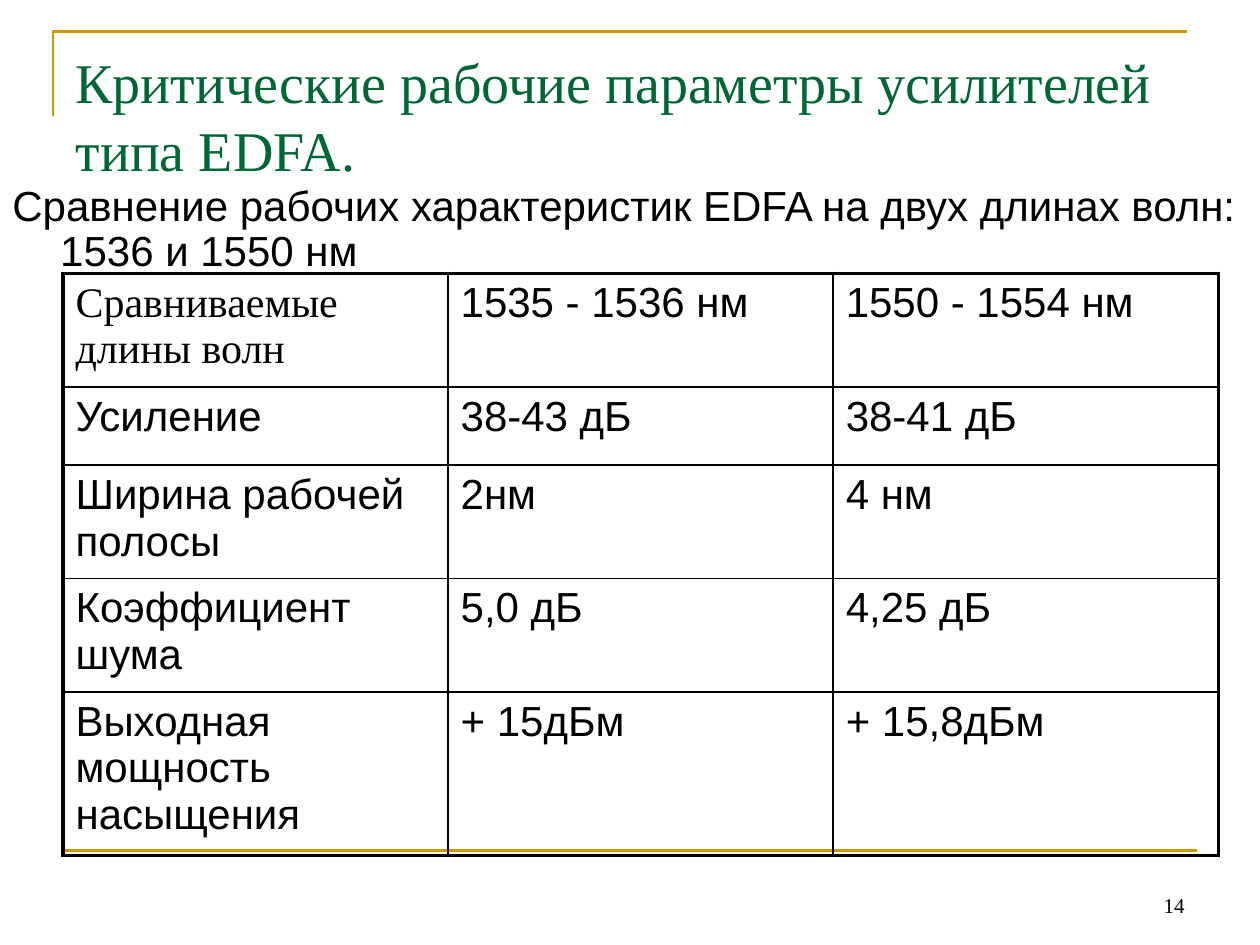
from lxml.etree import SubElement
from pptx import Presentation
from pptx.dml.color import RGBColor
from pptx.enum.text import MSO_ANCHOR as Anchor, PP_ALIGN as Align
from pptx.oxml.ns import qn
from pptx.util import Inches, Pt

TITLE = "Критические рабочие параметры усилителей типа EDFA."
SUBTITLE = "Сравнение рабочих характеристик EDFA на двух длинах волн: 1536 и 1550 нм"
PAGE_NUMBER = "14"
ROWS = [
    ("Сравниваемые длины волн", "1535 - 1536 нм", "1550 - 1554 нм"),
    ("Усиление", "38-43 дБ", "38-41 дБ"),
    ("Ширина рабочей полосы", "2нм", "4 нм"),
    ("Коэффициент шума", "5,0 дБ", "4,25 дБ"),
    ("Выходная мощность насыщения", "+ 15дБм", "+ 15,8дБм"),
]
ROW_HEIGHTS = [0.84, 0.62, 0.84, 0.84, 1.22]
TABLE_WIDTH = 9.17
SERIF, SANS = "Times New Roman", "Arial"
BLACK, GREEN, GOLD = "000000", "006633", "CC9900"
THICK, THIN = 2.25, 1


def color(hex_text):
    return RGBColor.from_string(hex_text)


def write(frame, text, size, font, hex_text=BLACK, align=Align.LEFT, anchor=Anchor.TOP):
    frame.word_wrap = True
    frame.vertical_anchor = anchor
    para = frame.paragraphs[0]
    para.text = text
    para.alignment = align
    para.font.size = Pt(size)
    para.font.name = font
    para.font.color.rgb = color(hex_text)
    return para


def place(shape, left, top, width, height):
    shape.left, shape.top = Inches(left), Inches(top)
    shape.width, shape.height = Inches(width), Inches(height)


def add_text_box(slide, left, top, width, height):
    box = slide.shapes.add_textbox(*map(Inches, (left, top, width, height)))
    return box.text_frame


def add_rules(slide):
    """Draw the gold corner above the title and the line below the table."""
    builder = slide.shapes.build_freeform(Inches(0.42), Inches(0.92), scale=1.0)
    builder.add_line_segments(
        [(Inches(0.42), Inches(0.25)), (Inches(9.42), Inches(0.25))], close=False)
    corner = builder.convert_to_shape()
    corner.shadow.inherit = False
    corner.fill.background()

    rule = slide.shapes.add_connector(
        1, Inches(0.5), Inches(6.75), Inches(9.5), Inches(6.75))
    SubElement(rule._element.spPr, qn("a:effectLst"))
    for shape in (corner, rule):
        shape.line.color.rgb = color(GOLD)
        shape.line.width = Pt(1.5)


def set_borders(cell, widths):
    """Set black borders, widths in points in the order left, right, top, bottom."""
    properties = cell._tc.get_or_add_tcPr()
    for side, width in zip("LRTB", widths):
        line = SubElement(properties, qn(f"a:ln{side}"), w=str(Pt(width)))
        fill = SubElement(line, qn("a:solidFill"))
        SubElement(fill, qn("a:srgbClr"), val=BLACK)


def add_comparison(slide):
    row_count, column_count = len(ROWS), len(ROWS[0])
    table = slide.shapes.add_table(
        row_count, column_count, Inches(0.5), Inches(2.17),
        Inches(TABLE_WIDTH), Inches(sum(ROW_HEIGHTS))).table
    table.first_row = table.horz_banding = False
    for column in table.columns:
        column.width = Inches(TABLE_WIDTH / column_count)
    for r, (values, height) in enumerate(zip(ROWS, ROW_HEIGHTS)):
        table.rows[r].height = Inches(height)
        for c, value in enumerate(values):
            cell = table.cell(r, c)
            write(cell.text_frame, value, 24, SERIF if r == c == 0 else SANS)
            outer = (c == 0, c == column_count - 1, r == 0, r == row_count - 1)
            set_borders(cell, [THICK if edge else THIN for edge in outer])
            cell.fill.background()


def main():
    deck = Presentation()
    deck.slide_width, deck.slide_height = Inches(10), Inches(7.5)
    slide = deck.slides.add_slide(deck.slide_layouts[5])

    add_rules(slide)
    number = add_text_box(slide, 7.17, 6.83, 2.33, 0.5)
    write(number, PAGE_NUMBER, 12, SERIF, align=Align.RIGHT, anchor=Anchor.BOTTOM)

    place(slide.shapes.title, 0.5, 0.33, 9, 1.25)
    write(slide.shapes.title.text_frame, TITLE, 32, SERIF, GREEN)

    subtitle = write(add_text_box(slide, 0, 1.42, 10, 1.04), SUBTITLE, 24, SANS)
    subtitle.line_spacing = 0.9
    indents = subtitle._p.get_or_add_pPr()
    indents.set("marL", str(Inches(0.38)))
    indents.set("indent", str(Inches(-0.38)))

    add_comparison(slide)
    deck.save("out.pptx")


if __name__ == "__main__":
    main()
